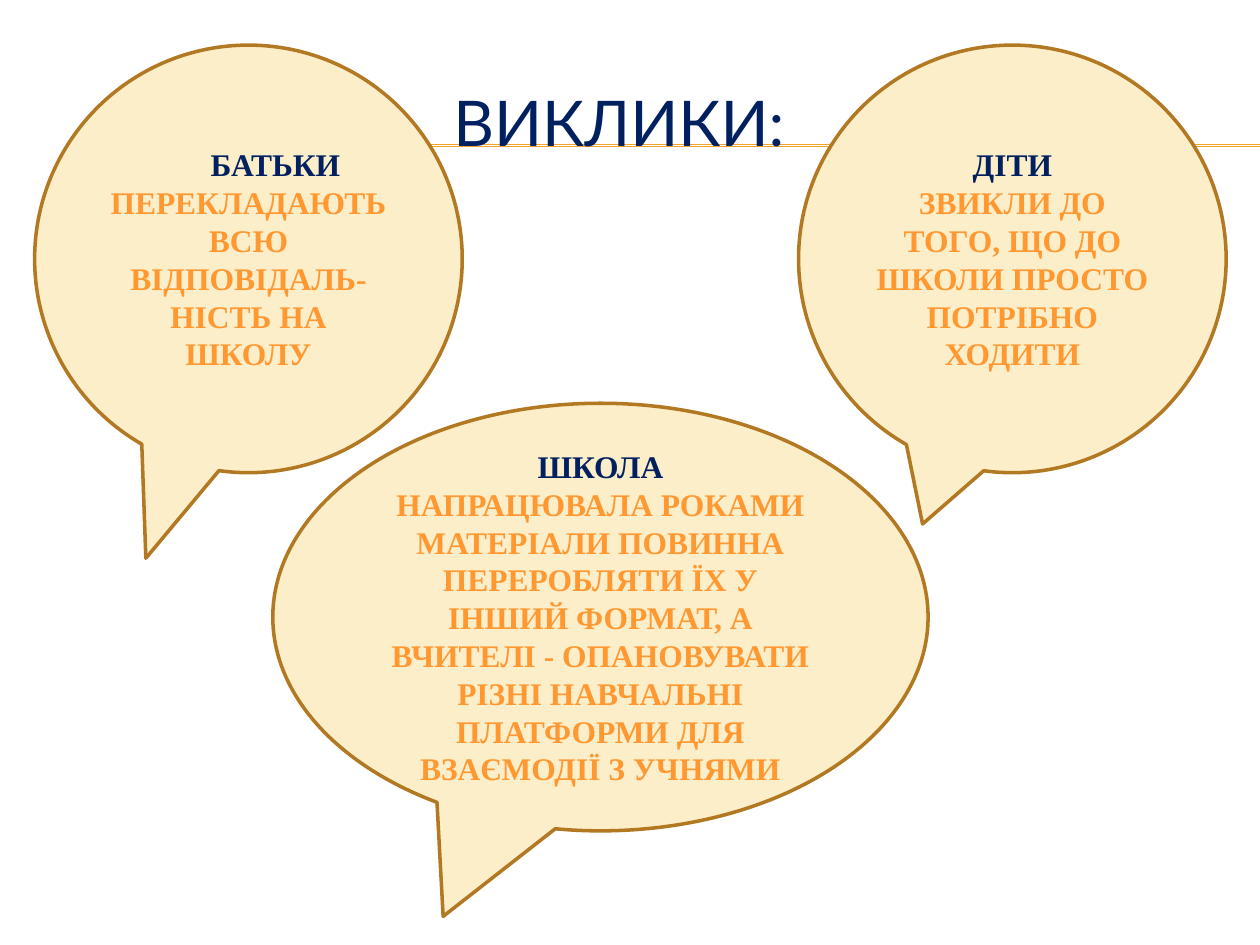
from lxml.etree import SubElement
from pptx import Presentation
from pptx.dml.color import RGBColor
from pptx.enum.shapes import MSO_CONNECTOR, MSO_SHAPE
from pptx.enum.text import MSO_ANCHOR, PP_ALIGN
from pptx.oxml.ns import qn
from pptx.util import Cm, Pt

COLOURS = {
    "navy": "002060",
    "orange": "FF9831",
    "rule": "F0A22E",
    "cream": "FBEEC9",
    "brown": "B27822",
}


def colour(name):
    return RGBColor.from_string(COLOURS[name])


def write(para, text, font="Times New Roman", size=18, tint="navy", bold=True,
          align=PP_ALIGN.CENTER, indent=0):
    para.alignment = align
    if indent:
        para._p.get_or_add_pPr().set("marL", str(Cm(indent)))
    span = para.add_run()
    span.text = text
    span.font.name = font
    span.font.size = Pt(size)
    span.font.bold = bold
    span.font.color.rgb = colour(tint)


deck = Presentation()
deck.slide_width = Cm(25.4)
deck.slide_height = Cm(19.05)
page = deck.slides.add_slide(deck.slide_layouts[6])

for height in (2.92, 2.95):
    rule = page.shapes.add_connector(
        MSO_CONNECTOR.STRAIGHT, Cm(1.42), Cm(height), Cm(25.4), Cm(height))
    rule.line.color.rgb = colour("rule")
    rule.line.width = Pt(0.75)
    SubElement(rule._element.spPr, qn("a:effectLst"))

title = page.shapes.add_textbox(Cm(0.84), Cm(1.27), Cm(24.13), Cm(2.34))
title.text_frame.word_wrap = True
title.text_frame.vertical_anchor = MSO_ANCHOR.MIDDLE
title.text_frame.margin_left = Cm(8.3)
write(title.text_frame.paragraphs[0], "ВИКЛИКИ:", font="Lato", size=36,
      bold=False, align=PP_ALIGN.LEFT)

callouts = [
    (16.1, 0.91, 8.62, (-0.21, 0.62), 0, "ДІТИ",
     "ЗВИКЛИ ДО ТОГО, ЩО ДО ШКОЛИ ПРОСТО ПОТРІБНО ХОДИТИ"),
    (0.7, 0.91, 8.62, (-0.24, 0.7), 1.09, "БАТЬКИ",
     "ПЕРЕКЛАДАЮТЬ ВСЮ ВІДПОВІДАЛЬ-НІСТЬ НА ШКОЛУ"),
    (5.5, 8.13, 13.21, (-0.24, 0.7), 0, "ШКОЛА",
     "НАПРАЦЮВАЛА РОКАМИ МАТЕРІАЛИ ПОВИННА ПЕРЕРОБЛЯТИ ЇХ У ІНШИЙ ФОРМАТ, "
     "А ВЧИТЕЛІ - ОПАНОВУВАТИ РІЗНІ НАВЧАЛЬНІ ПЛАТФОРМИ ДЛЯ ВЗАЄМОДІЇ З УЧНЯМИ"),
]

for left, top, width, tip, indent, heading, challenge in callouts:
    callout = page.shapes.add_shape(
        MSO_SHAPE.OVAL_CALLOUT, Cm(left), Cm(top), Cm(width), Cm(8.62))
    callout.shadow.inherit = False
    callout.adjustments[0], callout.adjustments[1] = tip
    callout.fill.solid()
    callout.fill.fore_color.rgb = colour("cream")
    callout.line.color.rgb = colour("brown")
    callout.line.width = Pt(2)
    frame = callout.text_frame
    frame.word_wrap = True
    frame.vertical_anchor = MSO_ANCHOR.MIDDLE
    frame.margin_left = frame.margin_right = Cm(0.24)
    write(frame.paragraphs[0], heading, indent=indent)
    write(frame.add_paragraph(), challenge, tint="orange")

deck.save("out.pptx")
